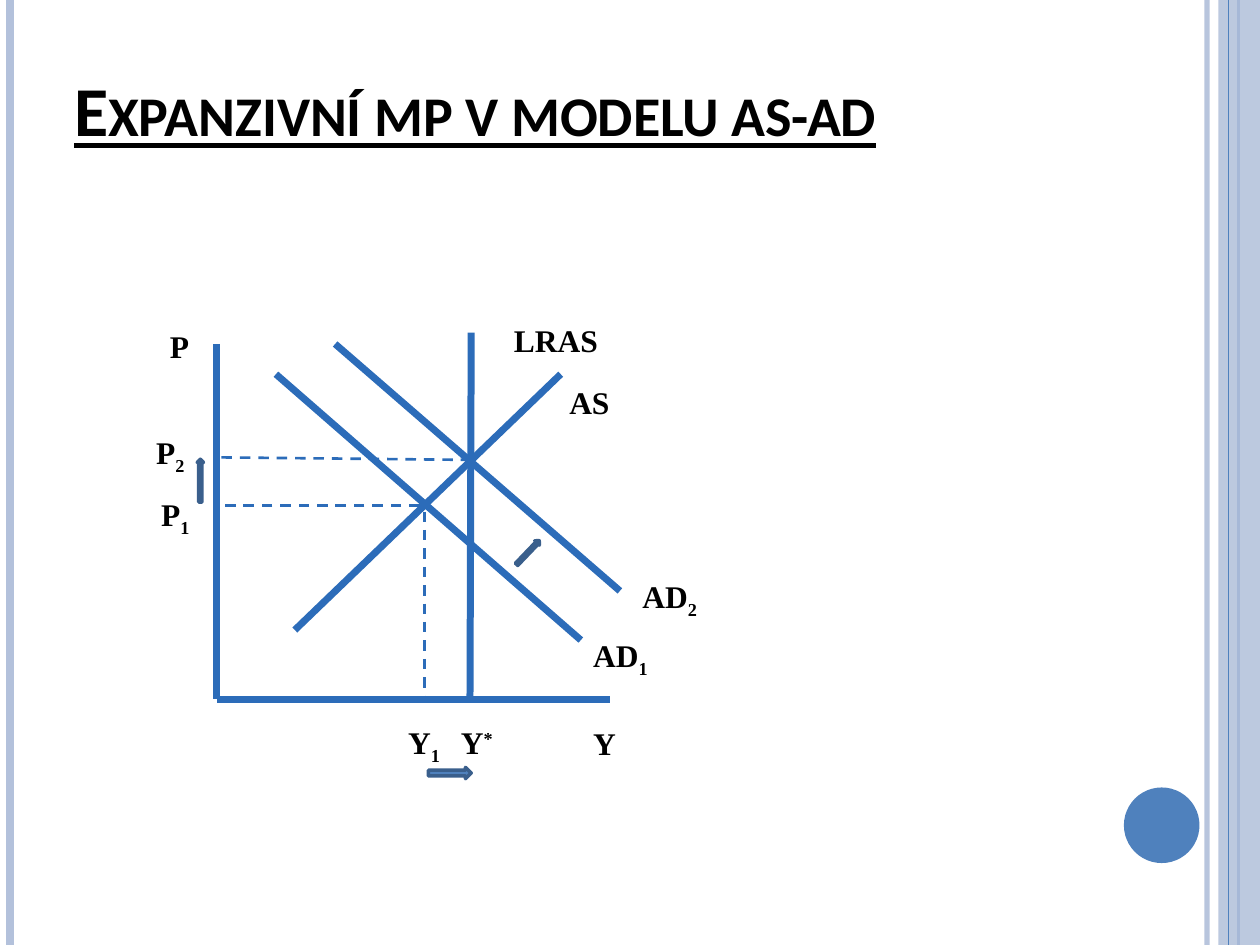
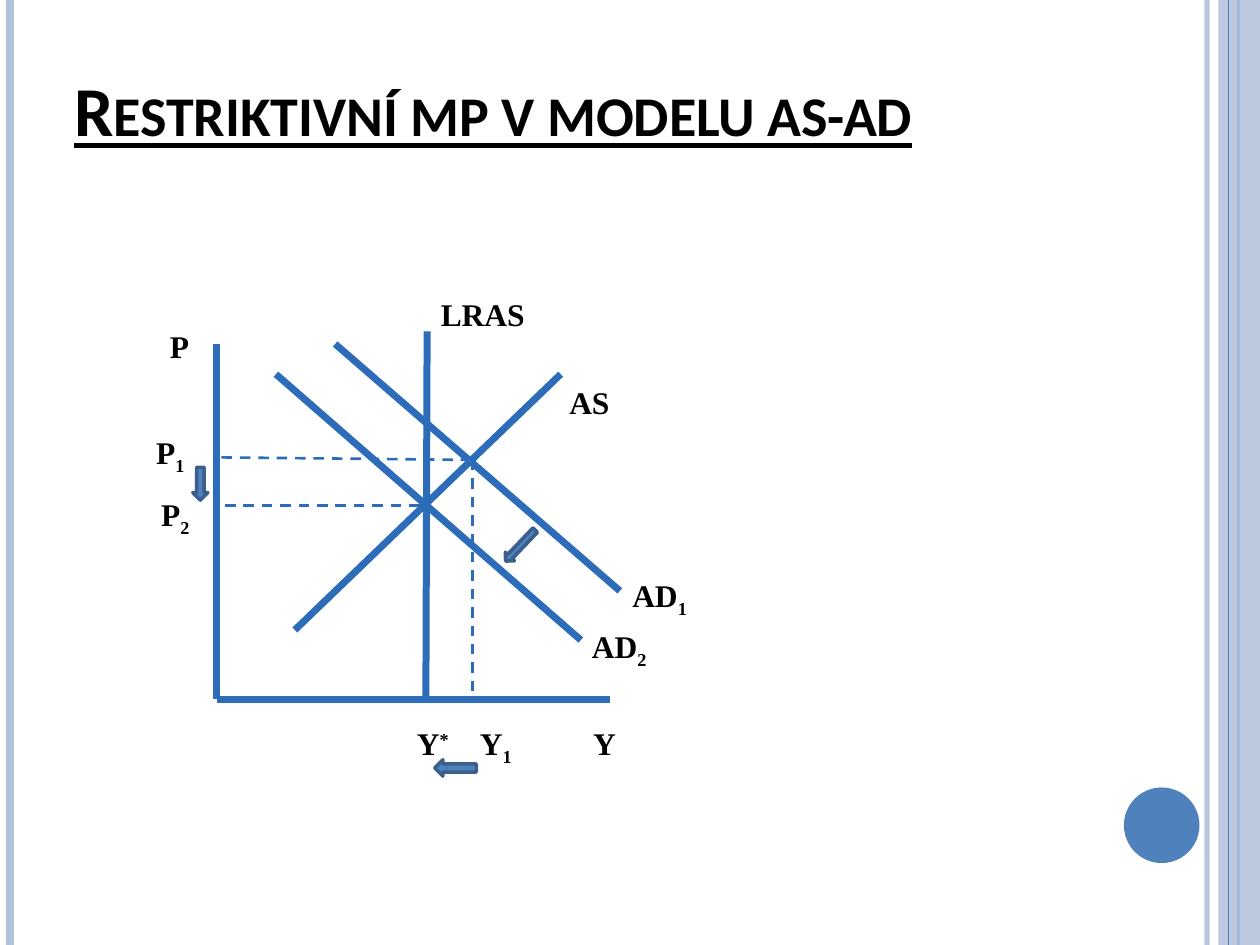
from pptx import Presentation
from pptx.dml.color import RGBColor
from pptx.enum.dml import MSO_LINE
from pptx.enum.shapes import MSO_CONNECTOR, MSO_SHAPE
from pptx.enum.text import MSO_ANCHOR
from pptx.oxml.ns import qn
from pptx.util import Inches, Pt
from lxml import etree

STRAIGHT = MSO_CONNECTOR.STRAIGHT
RECT, OVAL, ARROW = MSO_SHAPE.RECTANGLE, MSO_SHAPE.OVAL, MSO_SHAPE.RIGHT_ARROW
DASH = MSO_LINE.DASH
BOTTOM = MSO_ANCHOR.BOTTOM

PALE, BLUE, CURVE, EDGE, BLACK = "B3C1DB", "4F81BD", "2C6CB9", "3A5F8C", "000000"
THICK, THIN = 4, 1.5
SUB, SUPER = -25000, 30000


def color(code):
    return RGBColor.from_string(code)


def fade(host, percent):
    """Set the opacity of the solid fill inside a shape or line element."""
    tint = next(host.iter(qn("a:srgbClr")))
    etree.SubElement(tint, qn("a:alpha")).set("val", str(percent * 1000))


class Deck:
    def __init__(self):
        self.prs = Presentation()
        self.prs.slide_width, self.prs.slide_height = Inches(10), Inches(7.5)
        self.slide = None

    def line(self, x1, y1, x2, y2, tint=CURVE, width=THICK, dash=None, alpha=None):
        link = self.slide.shapes.add_connector(
            STRAIGHT, Inches(x1), Inches(y1), Inches(x2), Inches(y2))
        link.line.color.rgb = color(tint)
        link.line.width = Pt(width)
        if dash:
            link.line.dash_style = dash
        if alpha:
            fade(link.line._get_or_add_ln(), alpha)
        etree.SubElement(link._element.spPr, qn("a:effectLst"))

    def dashed(self, *ends):
        self.line(*ends, width=THIN, dash=DASH)

    def shape(self, kind, x, y, w, h, fill=BLUE, edge=None, alpha=None):
        item = self.slide.shapes.add_shape(
            kind, Inches(x), Inches(y), Inches(w), Inches(h))
        item.shadow.inherit = False
        item.fill.solid()
        item.fill.fore_color.rgb = color(fill)
        if alpha:
            fade(item._element.spPr, alpha)
        if edge:
            item.line.color.rgb = color(edge)
            item.line.width = Pt(2)
        else:
            item.line.fill.background()
        return item

    def arrow(self, x, y, w, h, angle):
        self.shape(ARROW, x, y, w, h, edge=EDGE).rotation = angle

    def text(self, x, y, w, h, words, face, size):
        box = self.slide.shapes.add_textbox(
            Inches(x), Inches(y), Inches(w), Inches(h))
        frame = box.text_frame
        frame.word_wrap = True
        para = frame.paragraphs[0]
        font = para.font
        font.name, font.size, font.bold = face, Pt(size), True
        font.color.rgb = color(BLACK)
        run = para.add_run()
        run.text = words
        return frame, para, run

    def label(self, x, y, words, mark="", shift=SUB):
        para = self.text(x, y, 1, 0.4, words, "Times New Roman", 18)[1]
        if mark:
            run = para.add_run()
            run.text = mark
            run._r.get_or_add_rPr().set("baseline", str(shift))

    def title(self, words):
        frame, para, run = self.text(0.49, 0.07, 9, 1.17, words, "Calibri", 40)
        frame.vertical_anchor = BOTTOM
        para.font.underline = True
        run._r.get_or_add_rPr().set("cap", "small")

    def start(self, words):
        self.slide = self.prs.slides.add_slide(self.prs.slide_layouts[6])
        # Side bands and disc
        self.line(9.58, 0, 9.58, 7.5, PALE, 3, alpha=93)
        self.line(0.08, 0, 0.08, 7.5, PALE, 4.5)
        self.line(9.83, 0, 9.83, 7.5, BLUE, 1.5)
        self.shape(RECT, 9.67, 0, 0.33, 7.5, PALE, alpha=87)
        self.line(9.75, 0, 9.75, 7.5, BLUE, 0.75)
        self.shape(OVAL, 8.92, 6.25, 0.6, 0.6)
        self.title(words)

    def model(self, upper, lower):
        """Draw what both diagrams share; upper and lower number the levels."""
        # Axes
        self.line(1.72, 2.73, 1.72, 5.55)
        self.line(1.72, 5.55, 4.84, 5.55)
        self.label(1.25, 2.55, "P")
        self.label(4.61, 5.7, "Y")
        # Demand and supply curves
        self.line(2.19, 2.97, 4.61, 5.08)
        self.line(2.66, 2.73, 4.92, 4.69)
        self.line(2.34, 5, 4.45, 2.97)
        self.label(4.42, 2.99, "AS")
        # Price levels
        self.dashed(3.74, 3.65, 1.74, 3.63)
        self.dashed(3.33, 4.01, 1.77, 4.01)
        self.label(1.14, 3.39, "P", upper)
        self.label(1.18, 3.88, "P", lower)


def main():
    deck = Deck()

    # Expansion: demand moves right, prices rise
    deck.start("Expanzivní mp v modelu as-ad")
    deck.model("2", "1")
    deck.line(3.73, 5.57, 3.74, 2.64)
    deck.dashed(3.37, 4.06, 3.37, 5.54)
    deck.label(3.98, 2.5, "LRAS")
    deck.label(5, 4.53, "AD", "2")
    deck.label(4.61, 5, "AD", "1")
    deck.label(3.14, 5.69, "Y", "1")
    deck.label(3.56, 5.69, "Y", "*", SUPER)
    deck.arrow(3.4, 6.09, 0.34, 0.09, 0)
    deck.arrow(4.06, 4.36, 0.26, 0.05, 313.7)
    deck.arrow(1.42, 3.79, 0.34, 0.05, 270)

    # Restriction: demand moves left, prices fall
    deck.start("Restriktivní mp v modelu as-ad")
    deck.model("1", "2")
    deck.line(3.38, 5.56, 3.39, 2.63)
    deck.dashed(3.75, 3.65, 3.75, 5.54)
    deck.label(3.4, 2.29, "LRAS")
    deck.label(4.92, 4.52, "AD", "1")
    deck.label(4.6, 4.93, "AD", "2")
    deck.label(3.71, 5.7, "Y", "1")
    deck.label(3.21, 5.7, "Y", "*", SUPER)
    deck.arrow(3.45, 6.03, 0.33, 0.13, 180)
    deck.arrow(3.96, 4.28, 0.34, 0.1, 133.7)
    deck.arrow(1.46, 3.78, 0.26, 0.12, 90)

    deck.prs.save("out.pptx")


if __name__ == "__main__":
    main()
